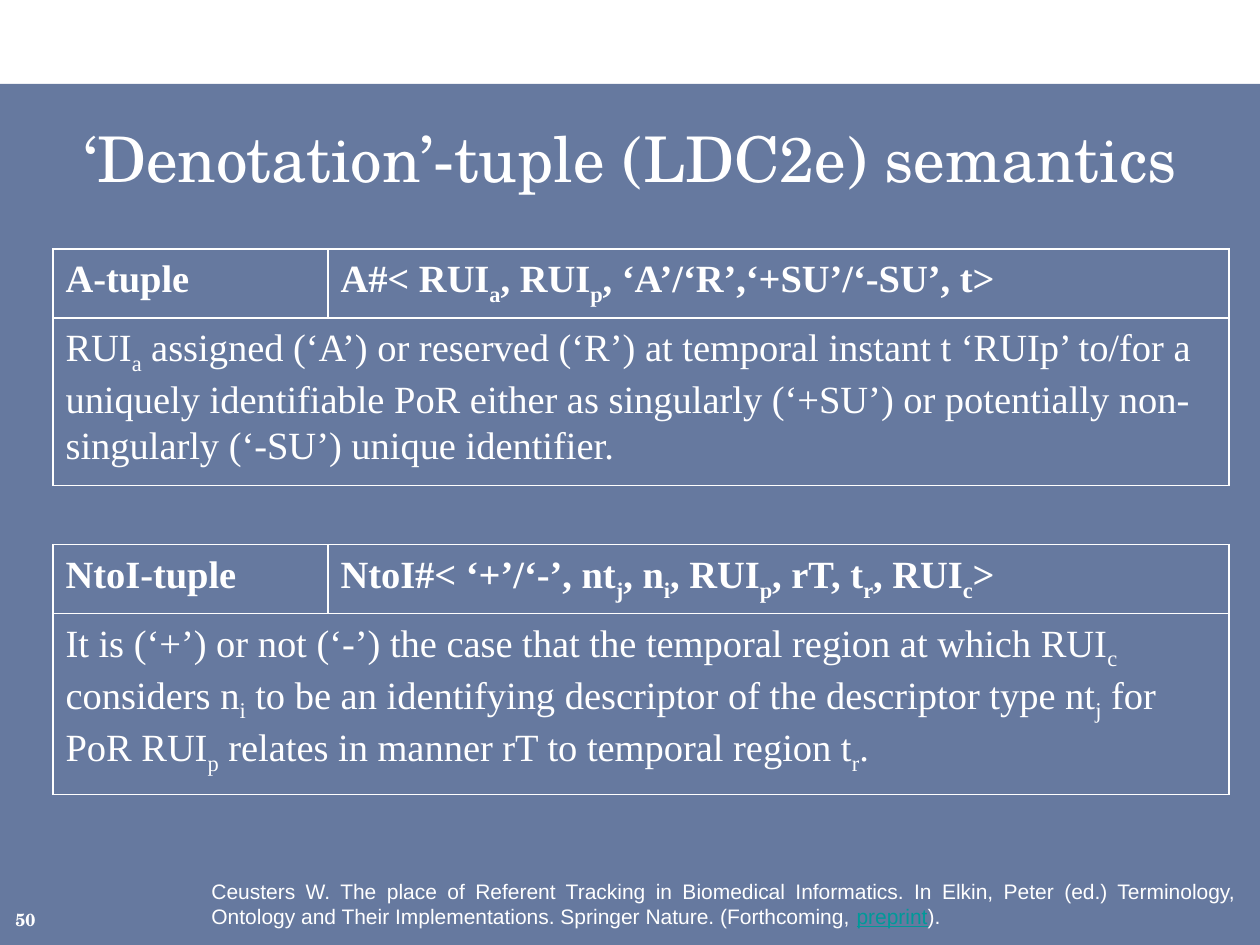
import pptx
import pptx.util
import pptx.dml.color
import pptx.enum.shapes
import pptx.enum.text
import pptx.oxml
import pptx.oxml.ns
from lxml import etree

EMU_PER_PX = 914400 / 126
COLORS = {"band": "002060", "text": "FFFFFF", "link": "009999"}
SERIF = "Times New Roman"
DISPLAY = "TeX Gyre Schola"
COLUMN_WIDTHS = [275, 901]
HEADER_HEIGHT = 65
GAP_HEIGHT = 59
TUPLES = [
    (
        "A-tuple",
        "A#< RUI|a|, RUI|p|, ‘A’/‘R’,‘+SU’/‘-SU’, t>",
        "RUI|a| assigned (‘A’) or reserved (‘R’) at temporal instant t ‘RUIp’ to/for a "
        "uniquely identifiable PoR either as singularly (‘+SU’) or potentially "
        "non-singularly (‘-SU’) unique identifier.",
        156,
    ),
    (
        "NtoI-tuple",
        "NtoI#< ‘+’/‘-’, nt|j|, n|i|, RUI|p|, rT, t|r|, RUI|c|>",
        "It is (‘+’) or not (‘-’) the case that the temporal region at which RUI|c| "
        "considers n|i| to be an identifying descriptor of the descriptor type nt|j| "
        "for PoR RUI|p| relates in manner rT to temporal region t|r|.",
        169,
    ),
]


def px(length):
    return pptx.util.Emu(round(length * EMU_PER_PX))


def rgb(name):
    return pptx.dml.color.RGBColor.from_string(COLORS[name])


def add_run(paragraph, text, font_name, size, color="text", bold=False, underline=False):
    run = paragraph.add_run()
    run.text = text
    run.font.name = font_name
    run.font.size = pptx.util.Pt(size)
    run.font.bold = bold
    run.font.underline = underline
    run.font.color.rgb = rgb(color)
    return run


def add_band(slide):
    band = slide.shapes.add_shape(
        pptx.enum.shapes.MSO_SHAPE.RECTANGLE, 0, px(84), px(1260), px(861)
    )
    band.shadow.inherit = False
    band.line.fill.background()
    band.fill.solid()
    band.fill.fore_color.rgb = rgb("band")
    color = band._element.spPr.find(".//" + pptx.oxml.ns.qn("a:srgbClr"))
    etree.SubElement(color, pptx.oxml.ns.qn("a:alpha"), val="60000")
    slide.shapes._spTree.insert(2, band._element)


def format_title(slide, text):
    title = slide.shapes.title
    title.left, title.top, title.width, title.height = px(32), px(105), px(1197), px(105)
    title.text_frame.vertical_anchor = pptx.enum.text.MSO_ANCHOR.MIDDLE
    paragraph = title.text_frame.paragraphs[0]
    paragraph.alignment = pptx.enum.text.PP_ALIGN.CENTER
    add_run(paragraph, text, DISPLAY, 36)


def add_text_box(slide, left, top, width, height):
    box = slide.shapes.add_textbox(px(left), px(top), px(width), px(height))
    box.text_frame.word_wrap = True
    return box.text_frame.paragraphs[0]


def set_borders(cell, visible_sides):
    properties = cell._tc.get_or_add_tcPr()
    for index, side in enumerate("LRTB"):
        line = pptx.oxml.parse_xml(
            f'<a:ln{side} {pptx.oxml.ns.nsdecls("a")} w="12700"/>'
        )
        if side in visible_sides:
            fill = etree.SubElement(line, pptx.oxml.ns.qn("a:solidFill"))
            etree.SubElement(fill, pptx.oxml.ns.qn("a:srgbClr"), val=COLORS["text"])
        else:
            etree.SubElement(line, pptx.oxml.ns.qn("a:noFill"))
        properties.insert(index, line)


def fill_cell(cell, marked_text, bold):
    paragraph = cell.text_frame.paragraphs[0]
    paragraph.alignment = pptx.enum.text.PP_ALIGN.LEFT
    paragraph.line_spacing = 1.07
    paragraph.space_after = pptx.util.Pt(8)
    for index, part in enumerate(marked_text.split("|")):
        run = add_run(paragraph, part, SERIF, 22, bold=bold)
        if index % 2:
            run._r.get_or_add_rPr().set("baseline", "-25000")


def add_tuple_table(slide):
    first, second = TUPLES
    heights = [HEADER_HEIGHT, first[3], GAP_HEIGHT, HEADER_HEIGHT, second[3]]
    frame = slide.shapes.add_table(
        len(heights), 2, px(53), px(249), px(sum(COLUMN_WIDTHS)), px(sum(heights))
    )
    table = frame.table
    table.first_row = False
    table.horz_banding = False
    for column, width in zip(table.columns, COLUMN_WIDTHS):
        column.width = px(width)
    for index, height in enumerate(heights):
        table.rows[index].height = px(height)
        for cell in table.rows[index].cells:
            cell.fill.background()
            set_borders(cell, "TB" if index == 2 else "LRTB")
    for row, (name, signature, meaning, _) in zip((0, 3), TUPLES):
        fill_cell(table.cell(row, 0), name, True)
        fill_cell(table.cell(row, 1), signature, True)
        table.cell(row + 1, 0).merge(table.cell(row + 1, 1))
        fill_cell(table.cell(row + 1, 0), meaning, False)


def add_citation(slide):
    paragraph = add_text_box(slide, 199, 872, 1050, 63)
    paragraph.alignment = pptx.enum.text.PP_ALIGN.JUSTIFY
    add_run(
        paragraph,
        "Ceusters W. The place of Referent Tracking in Biomedical Informatics. "
        "In Elkin, Peter (ed.) Terminology, Ontology and Their Implementations. "
        "Springer Nature. (Forthcoming, ",
        "Arial",
        12,
    )
    add_run(paragraph, "preprint", "Arial", 12, "link", underline=True)
    add_run(paragraph, ").", "Arial", 12)


def main():
    presentation = pptx.Presentation()
    presentation.slide_width = px(1260)
    presentation.slide_height = px(945)
    slide = presentation.slides.add_slide(presentation.slide_layouts[5])
    add_band(slide)
    add_run(add_text_box(slide, 3, 903, 50, 32), "50", DISPLAY, 10, bold=True)
    format_title(slide, "‘Denotation’-tuple (LDC2e) semantics")
    add_tuple_table(slide)
    add_citation(slide)
    presentation.save("out.pptx")


if __name__ == "__main__":
    main()
